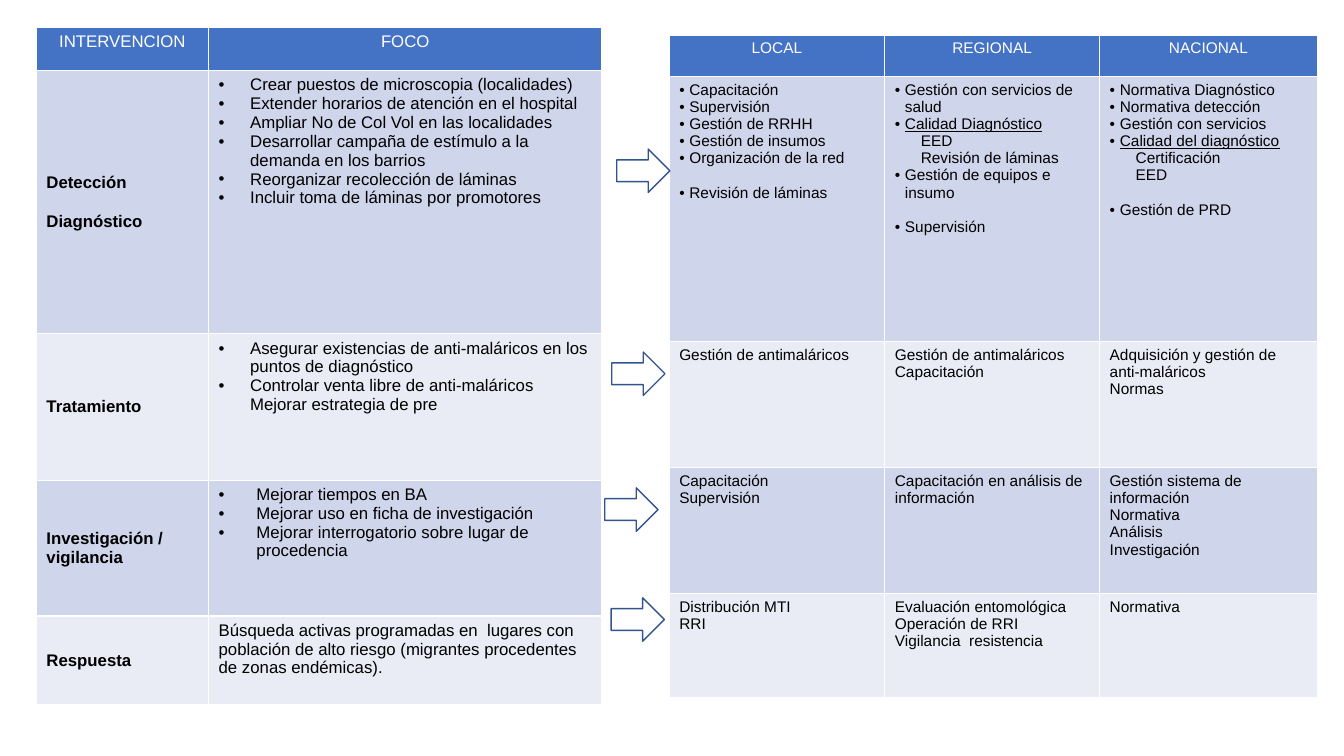
"""Build a slide that links malaria focus interventions to local, regional and national tasks."""
from lxml import etree
from pptx import Presentation
from pptx.dml.color import RGBColor
from pptx.enum.shapes import MSO_SHAPE
from pptx.enum.text import MSO_ANCHOR, PP_ALIGN
from pptx.oxml.ns import qn
from pptx.util import Pt

RIGHT_ARROW = MSO_SHAPE.RIGHT_ARROW
TOP, MIDDLE = MSO_ANCHOR.TOP, MSO_ANCHOR.MIDDLE
CENTER, LEFT = PP_ALIGN.CENTER, PP_ALIGN.LEFT

THEME = {
    "font": "Arial",
    "header": RGBColor(0x44, 0x72, 0xC4),
    "bands": [RGBColor(0xCF, 0xD5, 0xEA), RGBColor(0xE9, 0xEB, 0xF5)],
    "header_text": RGBColor(0xFF, 0xFF, 0xFF),
    "text": RGBColor(0, 0, 0),
    "arrow": RGBColor(0x32, 0x54, 0x91),
    "focus_size": 12,
    "level_size": 11,
}

PLAIN = {}
SPACED = {"before": 14}
WIDE_BULLET = {"bullet": 22.5}
WIDER_BULLET = {"bullet": 27}
BULLET = {"bullet": 7.2}
SPACED_BULLET = {"bullet": 7.2, "before": 12.5}
UNDERLINED_BULLET = {"bullet": 7.2, "underline": True}
SUBITEM = {"margin": 18.5}

FOCUS = {
    "place": (26, 19.5),
    "columns": [123, 281],
    "rows": [31, 188, 104.5, 97, 63.5],
    "size": THEME["focus_size"],
    "label_column": True,
    "header": ["INTERVENCION", "FOCO"],
    "body": [
        [
            [("Detección", PLAIN), ("Diagnóstico", SPACED)],
            [
                ("Crear puestos de microscopia (localidades)", WIDE_BULLET),
                ("Extender horarios de atención en el hospital", WIDE_BULLET),
                ("Ampliar No de Col Vol en las localidades", WIDE_BULLET),
                ("Desarrollar campaña de estímulo a la demanda en los barrios", WIDE_BULLET),
                ("Reorganizar recolección de láminas", WIDE_BULLET),
                ("Incluir toma de láminas por promotores", WIDE_BULLET),
            ],
        ],
        [
            [("Tratamiento", PLAIN)],
            [
                ("Asegurar existencias de anti-maláricos en los puntos de diagnóstico", WIDE_BULLET),
                ("Controlar venta libre de anti-maláricos Mejorar estrategia de pre", WIDE_BULLET),
            ],
        ],
        [
            [("Investigación / vigilancia", PLAIN)],
            [
                ("Mejorar tiempos en BA", WIDER_BULLET),
                ("Mejorar uso en ficha de investigación", WIDER_BULLET),
                ("Mejorar interrogatorio sobre lugar de procedencia", WIDER_BULLET),
            ],
        ],
        [
            [("Respuesta", PLAIN)],
            [("Búsqueda activas programadas en  lugares con población de alto riesgo "
              "(migrantes procedentes de zonas endémicas).", PLAIN)],
        ],
    ],
}

LEVELS = {
    "place": (478, 25),
    "columns": [154, 153.5, 155.5],
    "rows": [29.5, 189.5, 90, 90, 74.5],
    "size": THEME["level_size"],
    "label_column": False,
    "header": ["LOCAL", "REGIONAL", "NACIONAL"],
    "body": [
        [
            [
                ("Capacitación", BULLET),
                ("Supervisión", BULLET),
                ("Gestión de RRHH", BULLET),
                ("Gestión de insumos", BULLET),
                ("Organización de la red", BULLET),
                ("Revisión de láminas", SPACED_BULLET),
            ],
            [
                ("Gestión con servicios de salud", BULLET),
                ("Calidad Diagnóstico", UNDERLINED_BULLET),
                ("EED", SUBITEM),
                ("Revisión de láminas", SUBITEM),
                ("Gestión de equipos e insumo", BULLET),
                ("Supervisión", SPACED_BULLET),
            ],
            [
                ("Normativa Diagnóstico", BULLET),
                ("Normativa detección", BULLET),
                ("Gestión con servicios", BULLET),
                ("Calidad del diagnóstico", UNDERLINED_BULLET),
                ("Certificación", SUBITEM),
                ("EED", SUBITEM),
                ("Gestión de PRD", SPACED_BULLET),
            ],
        ],
        [
            [("Gestión de antimaláricos", PLAIN)],
            [("Gestión de antimaláricos", PLAIN), ("Capacitación", PLAIN)],
            [("Adquisición y gestión de anti-maláricos", PLAIN), ("Normas", PLAIN)],
        ],
        [
            [("Capacitación", PLAIN), ("Supervisión", PLAIN)],
            [("Capacitación en análisis de información", PLAIN)],
            [("Gestión sistema de información", PLAIN), ("Normativa", PLAIN),
             ("Análisis", PLAIN), ("Investigación", PLAIN)],
        ],
        [
            [("Distribución MTI", PLAIN), ("RRI", PLAIN)],
            [("Evaluación entomológica", PLAIN), ("Operación de RRI", PLAIN),
             ("Vigilancia  resistencia", PLAIN)],
            [("Normativa", PLAIN)],
        ],
    ],
}

ARROW_SIZE = (38, 31)
ARROW_PLACES = [(440.5, 106.5), (437, 251.5), (432, 348.5), (436.5, 427)]


def indent_paragraph(paragraph, line_format):
    properties = paragraph._p.get_or_add_pPr()
    bullet = line_format.get("bullet", 0)
    properties.set("marL", str(Pt(line_format.get("margin", bullet))))
    properties.set("indent", str(-Pt(bullet)))
    if bullet:
        etree.SubElement(properties, qn("a:buFont")).set("typeface", THEME["font"])
        etree.SubElement(properties, qn("a:buChar")).set("char", "•")


def fill_cell(cell, lines, fill, anchor, alignment, color, font_format):
    cell.fill.solid()
    cell.fill.fore_color.rgb = fill
    cell.vertical_anchor = anchor
    for index, (text, line_format) in enumerate(lines):
        frame = cell.text_frame
        paragraph = frame.add_paragraph() if index else frame.paragraphs[0]
        indent_paragraph(paragraph, line_format)
        paragraph.alignment = alignment
        if "before" in line_format:
            paragraph.space_before = Pt(line_format["before"])
        run = paragraph.add_run()
        run.text = text
        run.font.color.rgb = color
        values = {**font_format, "underline": line_format.get("underline", False)}
        for name, value in values.items():
            setattr(run.font, name, value)


def add_grid(slide, grid):
    columns, rows = grid["columns"], grid["rows"]
    bounds = [Pt(value) for value in (*grid["place"], sum(columns), sum(rows))]
    table = slide.shapes.add_table(len(rows), len(columns), *bounds).table
    for column, width in zip(table.columns, columns):
        column.width = Pt(width)
    for row, height in zip(table.rows, rows):
        row.height = Pt(height)
    font_format = {"name": THEME["font"], "size": Pt(grid["size"]), "bold": False}
    for column, title in enumerate(grid["header"]):
        fill_cell(table.cell(0, column), [(title, PLAIN)], THEME["header"], TOP, CENTER,
                  THEME["header_text"], font_format)
    for row, cells in enumerate(grid["body"]):
        for column, lines in enumerate(cells):
            is_label = grid["label_column"] and column == 0
            fill_cell(table.cell(row + 1, column), lines, THEME["bands"][row % 2],
                      MIDDLE if is_label else TOP, LEFT, THEME["text"],
                      {**font_format, "bold": is_label})


def add_arrow(slide, place):
    arrow = slide.shapes.add_shape(RIGHT_ARROW, *[Pt(value) for value in (*place, *ARROW_SIZE)])
    arrow.shadow.inherit = False
    arrow.fill.background()
    arrow.line.color.rgb = THEME["arrow"]
    arrow.line.width = Pt(1)


def main():
    presentation = Presentation()
    presentation.slide_width, presentation.slide_height = Pt(960), Pt(540)
    slide = presentation.slides.add_slide(presentation.slide_layouts[6])
    for grid in (FOCUS, LEVELS):
        add_grid(slide, grid)
    for place in ARROW_PLACES:
        add_arrow(slide, place)
    presentation.save("out.pptx")


if __name__ == "__main__":
    main()
